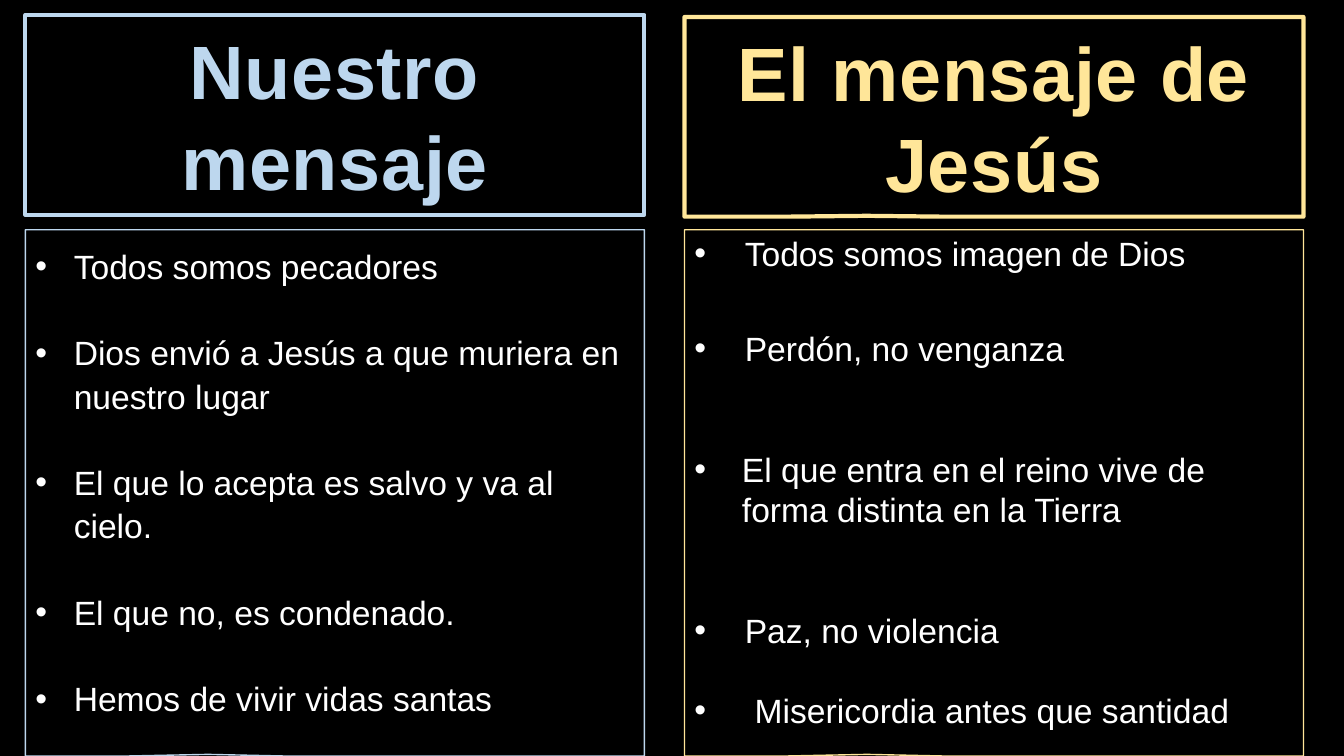
from lxml import etree
from pptx import Presentation
from pptx import util as u
from pptx.dml.color import RGBColor
from pptx.enum import text
from pptx.oxml.ns import qn

BLACK, WHITE, BLUE, YELLOW = "000000", "FFFFFF", "BDD7EE", "FFE699"
COLUMN_WIDTH = 15.6
HEADING_HEIGHT = 5.03
LIST_TOP, LIST_HEIGHT = 5.79, 13.26

# Items: wording, hanging indent (cm), space before (pt)
OUR_MESSAGE = [
    ("Todos somos pecadores", 0.97, 0),
    ("Dios envió a Jesús a que muriera en nuestro lugar", 0.97, 30.9),
    ("El que lo acepta es salvo y va al cielo.", 0.97, 30.9),
    ("El que no, es condenado.", 0.97, 30.9),
    ("Hemos de vivir vidas santas", 0.97, 30.9),
]
JESUS_MESSAGE = [
    ("Todos somos imagen de Dios", 1.27, 0),
    ("Perdón, no venganza", 1.27, 39.3),
    ("El que entra en el reino vive de forma distinta en la Tierra", 1.2, 57.9),
    ("Paz, no violencia", 1.27, 57.9),
    ("Misericordia antes que santidad", 1.52, 28.6),
]


def color(hex_value):
    return RGBColor.from_string(hex_value)


def set_all(target, values):
    for name, value in values.items():
        setattr(target, name, value)


def frame(panel, left, top, height, outline, weight, tip, anchor, inset):
    """Place a placeholder and give it a callout outline."""
    set_all(panel, dict(left=u.Cm(left), top=u.Cm(top),
                        width=u.Cm(COLUMN_WIDTH), height=u.Cm(height)))
    callout = etree.SubElement(panel.element.spPr, qn("a:prstGeom"), prst="wedgeRectCallout")
    adjustments = etree.SubElement(callout, qn("a:avLst"))
    for number, value in enumerate(tip, 1):
        etree.SubElement(adjustments, qn("a:gd"), name=f"adj{number}", fmla=f"val {value}")
    panel.fill.solid()
    panel.fill.fore_color.rgb = color(BLACK)
    panel.line.color.rgb = color(outline)
    panel.line.width = u.Pt(weight)
    set_all(panel.text_frame, dict(
        word_wrap=True, auto_size=text.MSO_AUTO_SIZE.NONE, vertical_anchor=anchor,
        margin_left=u.Cm(0.25), margin_right=u.Cm(0.25),
        margin_top=u.Cm(inset), margin_bottom=u.Cm(0.13)))


def write(paragraph, wording, size, hex_value, bold, **layout):
    run = paragraph.add_run()
    run.text = wording
    set_all(run.font, dict(name="Arial", size=u.Pt(size), bold=bold))
    run.font.color.rgb = color(hex_value)
    set_all(paragraph, dict(space_after=u.Pt(0), **layout))
    return run


def add_heading(panel, wording, left, top, hex_value):
    frame(panel, left, top, HEADING_HEIGHT, hex_value, 3, (-20600, 49600),
          text.MSO_ANCHOR.MIDDLE, 0.13)
    run = write(panel.text_frame.paragraphs[0], wording, 54, hex_value, True,
                alignment=text.PP_ALIGN.CENTER, space_before=u.Pt(0), line_spacing=u.Pt(65))
    run.font.element.set("spc", "50") if hasattr(run.font, "element") else \
        run._r.get_or_add_rPr().set("spc", "50")


def add_list(panel, items, left, outline, inset, pitch):
    frame(panel, left, LIST_TOP, LIST_HEIGHT, outline, 1, (-20500, 49700),
          text.MSO_ANCHOR.TOP, inset)
    body = panel.text_frame
    for number, (wording, indent, gap) in enumerate(items):
        paragraph = body.add_paragraph() if number else body.paragraphs[0]
        write(paragraph, wording, 24, WHITE, False, alignment=text.PP_ALIGN.LEFT,
              space_before=u.Pt(gap), line_spacing=u.Pt(pitch))
        # Hanging bullet
        properties = paragraph._p.get_or_add_pPr()
        properties.set("marL", str(u.Cm(indent)))
        properties.set("indent", str(-u.Cm(indent)))
        etree.SubElement(properties, qn("a:buFont"), typeface="Arial")
        etree.SubElement(properties, qn("a:buChar"), char="•")


def main():
    deck = Presentation()
    set_all(deck, dict(slide_width=u.Cm(33.87), slide_height=u.Cm(19.05)))
    slide = deck.slides.add_slide(deck.slide_layouts.get_by_name("Comparison"))
    slide.background.fill.solid()
    slide.background.fill.fore_color.rgb = color(BLACK)
    panels = {panel.placeholder_format.idx: panel for panel in slide.placeholders}

    # Left column
    add_heading(panels[0], "Nuestro mensaje", 0.64, 0.38, BLUE)
    add_list(panels[2], OUR_MESSAGE, 0.64, BLUE, 0.33, 30.9)

    # Right column
    add_heading(panels[3], "El mensaje de Jesús", 17.25, 0.43, YELLOW)
    add_list(panels[4], JESUS_MESSAGE, 17.25, YELLOW, 0.08, 28.6)

    # Unused and date, footer or number placeholders
    for idx, panel in panels.items():
        if idx not in (0, 2, 3, 4):
            panel.element.getparent().remove(panel.element)

    deck.save("out.pptx")


if __name__ == "__main__":
    main()
